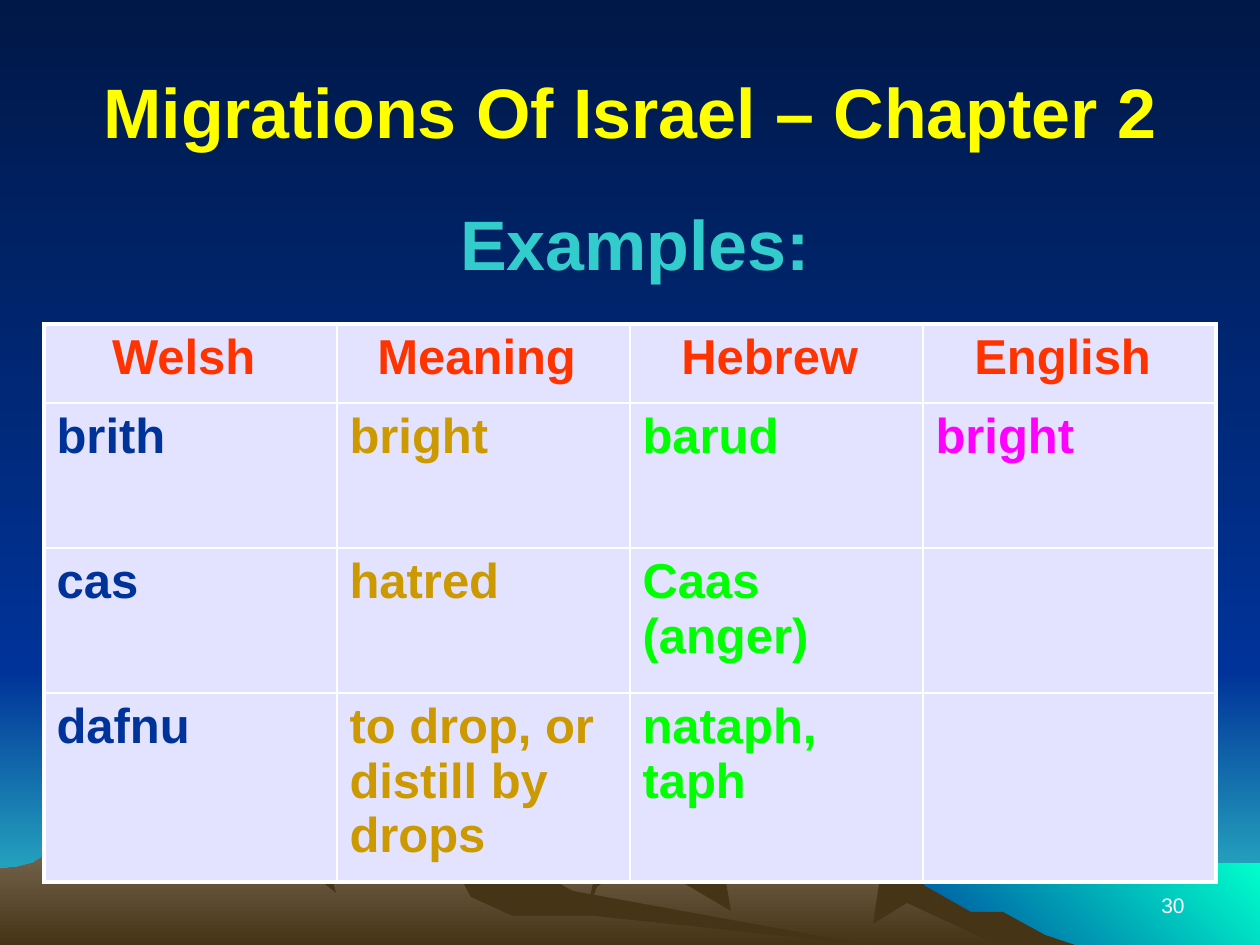
from pptx import Presentation
from pptx.dml.color import RGBColor as RGB
from pptx.enum.shapes import MSO_SHAPE as SHAPE
from pptx.enum.text import MSO_ANCHOR as ANCHOR, PP_ALIGN as ALIGN
from pptx.oxml import parse_xml
from pptx.oxml.ns import nsdecls
from pptx.util import Pt

PX = 914400 / 126
THEME = {
    "font": "Arial",
    "title": {"size": 40, "color": "FFFF00", "bold": True},
    "subtitle": {"size": 40, "color": "33CCCC", "bold": True},
    "number": {"size": 12, "color": "FFFFFF", "bold": False},
    "table": {"size": 28, "bold": True},
    "header": "FF3300",
    "columns": ["003399", "CC9900", "00FF00", "FF00FF"],
    "cell": "E3E3FF",
    "border": "FFFFFF",
    "sky": ("001847", "003399"),
    "horizon": ("003399", "33CCCC"),
    "sea": ("003399", "00FFCC"),
    "far_hill": ("7F705A", "463416"),
    "near_hill": ("7F705A", "463416"),
    "shade": ("463416",),
}


def paint(sp, colors, angle=270):
    """Fill with one colour, or a gradient of two (angle counter-clockwise)."""
    sp.shadow.inherit = False
    sp.line.fill.background()
    if len(colors) == 1:
        sp.fill.solid()
        sp.fill.fore_color.rgb = RGB.from_string(colors[0])
        return
    sp.fill.gradient()
    sp.fill.gradient_angle = angle
    for stop, color, position in zip(sp.fill.gradient_stops, colors, (0, 1)):
        stop.color.rgb = RGB.from_string(color)
        stop.position = position


def write(tf, text, style, align):
    p = tf.paragraphs[0]
    p.alignment = align
    r = p.add_run()
    r.text = text
    font = {"name": THEME["font"], "size": Pt(style["size"]), "bold": style["bold"]}
    for name, value in font.items():
        setattr(r.font, name, value)
    r.font.color.rgb = RGB.from_string(style["color"])


prs = Presentation()
prs.slide_width, prs.slide_height = round(1260 * PX), round(945 * PX)
s = prs.slides.add_slide(prs.slide_layouts[5])

# Sky and sea
bands = [
    ("horizon", (0, 672, 1260, 273), 270),
    ("sky", (0, 0, 1260, 672), 270),
    ("sea", (861, 863, 399, 82), 45),
]
for name, box, angle in bands:
    sp = s.shapes.add_shape(SHAPE.RECTANGLE, *[round(v * PX) for v in box])
    paint(sp, THEME[name], angle)

# Hills, each followed by its shaded slopes
hills = [
    ("far_hill", [
        (1011, 932), (980, 916), (963, 911), (911, 879), (885, 845), (863, 832),
        (852, 839), (827, 845), (793, 845), (772, 858), (713, 878), (675, 869),
        (667, 852), (641, 843), (612, 848), (593, 829), (567, 837), (552, 845),
        (527, 851), (496, 863), (447, 879), (412, 893), (349, 931), (325, 945),
        (1034, 945)]),
    ("shade", [
        (1003, 912), (971, 912), (925, 886), (891, 845), (863, 832), (868, 837),
        (863, 845), (871, 857), (879, 885), (873, 924), (907, 903), (998, 945),
        (1075, 945), (1045, 935)]),
    ("shade", [
        (593, 829), (597, 834), (591, 837), (590, 845), (595, 857), (596, 869),
        (586, 916), (597, 887), (604, 882), (614, 861), (617, 852), (626, 845)]),
    ("shade", [
        (667, 852), (663, 861), (675, 878), (731, 911), (726, 882), (746, 868),
        (718, 872), (683, 863)]),
    ("near_hill", [
        (869, 945), (840, 942), (544, 897), (446, 838), (417, 835), (412, 842),
        (401, 837), (373, 852), (341, 859), (328, 852), (297, 858), (281, 835),
        (262, 829), (249, 829), (227, 838), (202, 845), (180, 840), (166, 845),
        (140, 843), (118, 845), (86, 834), (71, 843), (58, 849), (44, 856),
        (33, 863), (18, 867), (0, 869), (0, 945)]),
    ("shade", [
        (267, 835), (262, 843), (276, 854), (292, 869), (304, 867), (336, 893),
        (329, 868), (341, 859), (328, 849), (300, 838), (268, 830)]),
    ("shade", [
        (466, 842), (446, 838), (433, 838), (427, 843), (425, 866), (438, 861),
        (457, 871), (471, 897), (513, 916), (595, 916), (869, 945), (573, 891),
        (538, 872), (518, 862), (486, 851)]),
]
for name, points in hills:
    fb = s.shapes.build_freeform(*points[0], scale=PX)
    fb.add_line_segments(points[1:], close=True)
    paint(fb.convert_to_shape(), THEME[name])

# Title, brought in front of the scenery, then subtitle and slide number
title = s.shapes.title
s.shapes.element.append(title.element)
for side, value in {"left": 63, "top": 32, "width": 1134, "height": 157}.items():
    setattr(title, side, round(value * PX))
title.text_frame.vertical_anchor = ANCHOR.MIDDLE
write(title.text_frame, "Migrations Of Israel – Chapter 2", THEME["title"], ALIGN.CENTER)

labels = [
    ("Examples:", "subtitle", (223, 194, 824, 97), ALIGN.CENTER, ANCHOR.TOP),
    ("30", "number", (903, 861, 294, 63), ALIGN.RIGHT, ANCHOR.BOTTOM),
]
for text, name, box, align, anchor in labels:
    tf = s.shapes.add_textbox(*[round(v * PX) for v in box]).text_frame
    tf.word_wrap = True
    tf.vertical_anchor = anchor
    write(tf, text, THEME[name], align)

# Word table; the header's trailing spaces take part in its centring
rows = [
    ["Welsh ", "Meaning ", "Hebrew ", "English "],
    ["brith", "bright", "barud", "bright"],
    ["cas", "hatred", "Caas (anger)", ""],
    ["dafnu", "to drop, or distill by drops", "nataph, taph", ""],
]
heights = [79, 145, 145, 189]
col_width = 293
n_rows, n_cols = len(rows), len(rows[0])
box = (44, 324, col_width * n_cols, sum(heights))
table = s.shapes.add_table(n_rows, n_cols, *[round(v * PX) for v in box]).table
for col in table.columns:
    col.width = round(col_width * PX)
for i, (row, height) in enumerate(zip(rows, heights)):
    table.rows[i].height = round(height * PX)
    for j, text in enumerate(row):
        cell = table.cell(i, j)
        tcPr = cell._tc.get_or_add_tcPr()
        outer = {"L": j == 0, "R": j == n_cols - 1, "T": i == 0, "B": i == n_rows - 1}
        for side, is_outer in outer.items():
            tcPr.append(parse_xml(
                f'<a:ln{side} {nsdecls("a")} w="{Pt(2.25 if is_outer else 1)}"><a:solidFill>'
                f'<a:srgbClr val="{THEME["border"]}"/></a:solidFill></a:ln{side}>'))
        cell.fill.solid()
        cell.fill.fore_color.rgb = RGB.from_string(THEME["cell"])
        if text:
            color = THEME["columns"][j] if i else THEME["header"]
            align = ALIGN.LEFT if i else ALIGN.CENTER
            write(cell.text_frame, text, {**THEME["table"], "color": color}, align)

prs.save("out.pptx")
